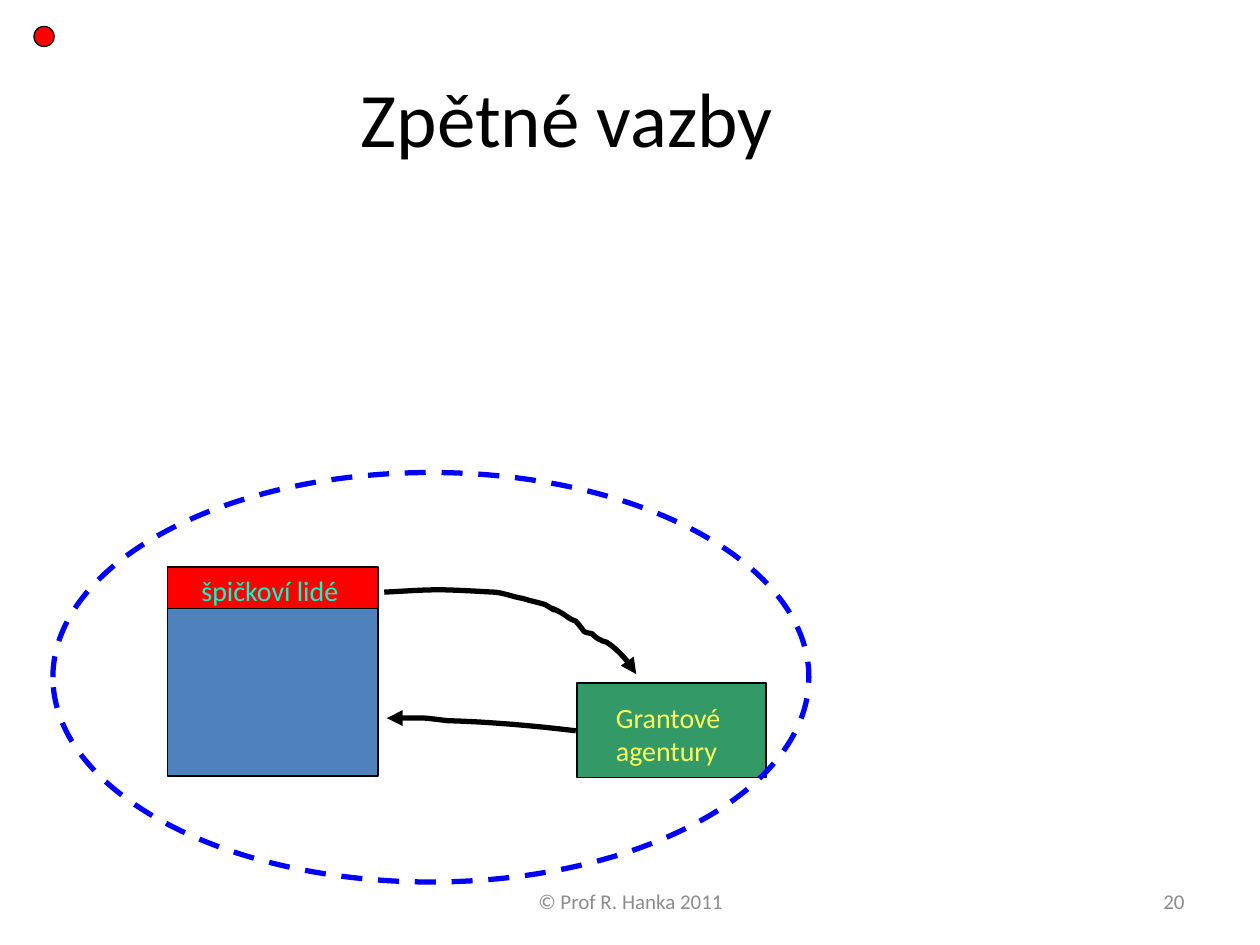
from dataclasses import dataclass

from lxml import etree
from pptx import Presentation
from pptx import util as u
from pptx.dml.color import RGBColor
from pptx.enum import dml, shapes, text
from pptx.oxml.ns import qn

COLORS = {
    "black": "000000", "gray": "8C8C8C", "red": "FF0000", "blue": "4F81BD",
    "green": "339966", "yellow": "FEFE5C", "mint": "00FFCC", "loop": "0000FF",
}
FONT = "Calibri"
CURVE_STEPS = 8
RECT = shapes.MSO_SHAPE.RECTANGLE
OVAL = shapes.MSO_SHAPE.OVAL
Point = tuple[float, float]
Bounds = tuple[float, float, float, float]


@dataclass
class Block:
    kind: shapes.MSO_SHAPE
    bounds: Bounds
    fill: str | None
    line: str = "black"
    width: float = 0.75
    dashed: bool = False


@dataclass
class Label:
    lines: list[str]
    bounds: Bounds
    size: float
    color: str
    align: text.PP_ALIGN = text.PP_ALIGN.LEFT
    anchor: text.MSO_ANCHOR = text.MSO_ANCHOR.TOP
    wrap: bool = True


@dataclass
class Arrow:
    start: Point
    curves: list[tuple[Point, Point, Point]]


def rgb(name: str) -> RGBColor:
    return RGBColor.from_string(COLORS[name])


def inches(values: tuple[float, ...]) -> list[u.Inches]:
    return [u.Inches(value) for value in values]


def draw_block(parent, block: Block) -> None:
    shape = parent.add_shape(block.kind, *inches(block.bounds))
    shape.shadow.inherit = False
    if block.fill:
        shape.fill.solid()
        shape.fill.fore_color.rgb = rgb(block.fill)
    else:
        shape.fill.background()
    shape.line.color.rgb = rgb(block.line)
    shape.line.width = u.Pt(block.width)
    if block.dashed:
        shape.line.dash_style = dml.MSO_LINE.DASH


def draw_label(parent, label: Label) -> None:
    box = parent.add_textbox(*inches(label.bounds))
    frame = box.text_frame
    frame.word_wrap = label.wrap
    frame.vertical_anchor = label.anchor
    if not label.wrap:
        frame.auto_size = text.MSO_AUTO_SIZE.SHAPE_TO_FIT_TEXT
    for index, line in enumerate(label.lines):
        para = frame.add_paragraph() if index else frame.paragraphs[0]
        para.alignment = label.align
        span = para.add_run()
        span.text = line
        span.font.name = FONT
        span.font.size = u.Pt(label.size)
        span.font.color.rgb = rgb(label.color)


def curve_points(arrow: Arrow) -> list[Point]:
    """Sample the chain of cubic Bézier curves, leaving out its start."""
    points = []
    start = arrow.start
    for first, second, end in arrow.curves:
        for step in range(1, CURVE_STEPS + 1):
            t = step / CURVE_STEPS
            weights = ((1 - t) ** 3, 3 * t * (1 - t) ** 2, 3 * t * t * (1 - t), t ** 3)
            corners = (start, first, second, end)
            points.append(tuple(
                sum(weight * corner[axis] for weight, corner in zip(weights, corners))
                for axis in (0, 1)))
        start = end
    return points


def draw_arrow(parent, arrow: Arrow) -> None:
    builder = parent.build_freeform(*inches(arrow.start))
    builder.add_line_segments([inches(point) for point in curve_points(arrow)], close=False)
    shape = builder.convert_to_shape()
    shape.shadow.inherit = False
    shape.fill.background()
    shape.line.color.rgb = rgb("black")
    shape.line.width = u.Pt(3)
    outline = shape.line._get_or_add_ln()
    etree.SubElement(outline, qn("a:round"))
    etree.SubElement(outline, qn("a:tailEnd"), type="triangle")


CENTER, RIGHT = text.PP_ALIGN.CENTER, text.PP_ALIGN.RIGHT
MIDDLE = text.MSO_ANCHOR.MIDDLE

HEADINGS = [
    Label(["© Prof R. Hanka 2011"], (3.42, 6.95, 3.17, 0.4), 12, "gray", CENTER, MIDDLE),
    Label(["20"], (7.17, 6.95, 2.33, 0.4), 12, "gray", RIGHT, MIDDLE),
    Label(["Zpětné vazby"], (0, 0.3, 9, 1.25), 44, "black", CENTER, MIDDLE),
]
PEOPLE_BLOCKS = [
    Block(RECT, (1.33, 4.5, 1.67, 0.33), "red"),
    Block(RECT, (1.33, 4.83, 1.67, 1.33), "blue"),
]
PEOPLE_LABEL = Label(["špičkoví lidé"], (1.5, 4.5, 1.35, 0.37), 16, "mint", wrap=False)
AGENCY_BLOCK = Block(RECT, (4.58, 5.42, 1.5, 0.75), "green")
AGENCY_LABEL = Label(["Grantové", "agentury"], (4.79, 5.51, 1.03, 0.64), 16, "yellow", wrap=False)
ARROWS = [
    Arrow((3.05, 4.7), [
        ((3.45, 4.68), (3.4, 4.67), (3.92, 4.7)),
        ((3.98, 4.7), (4.08, 4.74), (4.15, 4.75)),
        ((4.21, 4.77), (4.27, 4.78), (4.33, 4.8)),
        ((4.49, 4.9), (4.29, 4.78), (4.43, 4.85)),
        ((4.49, 4.88), (4.51, 4.91), (4.57, 4.93)),
        ((4.66, 5.03), (4.61, 5.01), (4.7, 5.03)),
        ((4.72, 5.05), (4.74, 5.07), (4.77, 5.08)),
        ((4.78, 5.09), (4.8, 5.09), (4.82, 5.1)),
        ((4.88, 5.14), (4.94, 5.2), (4.98, 5.25)),
        ((5.01, 5.28), (5.05, 5.31), (5.05, 5.35)),
    ]),
    Arrow((4.57, 5.8), [
        ((4.23, 5.76), (3.89, 5.73), (3.55, 5.72)),
        ((3.29, 5.69), (3.45, 5.7), (3.07, 5.7)),
    ]),
]
LOOP = Block(OVAL, (0.42, 3.75, 6, 3.25), None, "loop", 3, dashed=True)
MARKER = Block(OVAL, (0.27, 0.21, 0.16, 0.16), "red")


def main() -> None:
    deck = Presentation()
    deck.slide_width, deck.slide_height = inches((10, 7.5))
    page = deck.slides.add_slide(deck.slide_layouts[6])
    for heading in HEADINGS:
        draw_label(page.shapes, heading)
    for block in PEOPLE_BLOCKS:
        draw_block(page.shapes, block)
    for arrow in ARROWS:
        draw_arrow(page.shapes, arrow)
    agency = page.shapes.add_group_shape()
    draw_block(agency.shapes, AGENCY_BLOCK)
    draw_label(agency.shapes, AGENCY_LABEL)
    draw_label(page.shapes, PEOPLE_LABEL)
    for oval in (LOOP, MARKER):
        draw_block(page.shapes, oval)
    deck.save("out.pptx")


if __name__ == "__main__":
    main()
